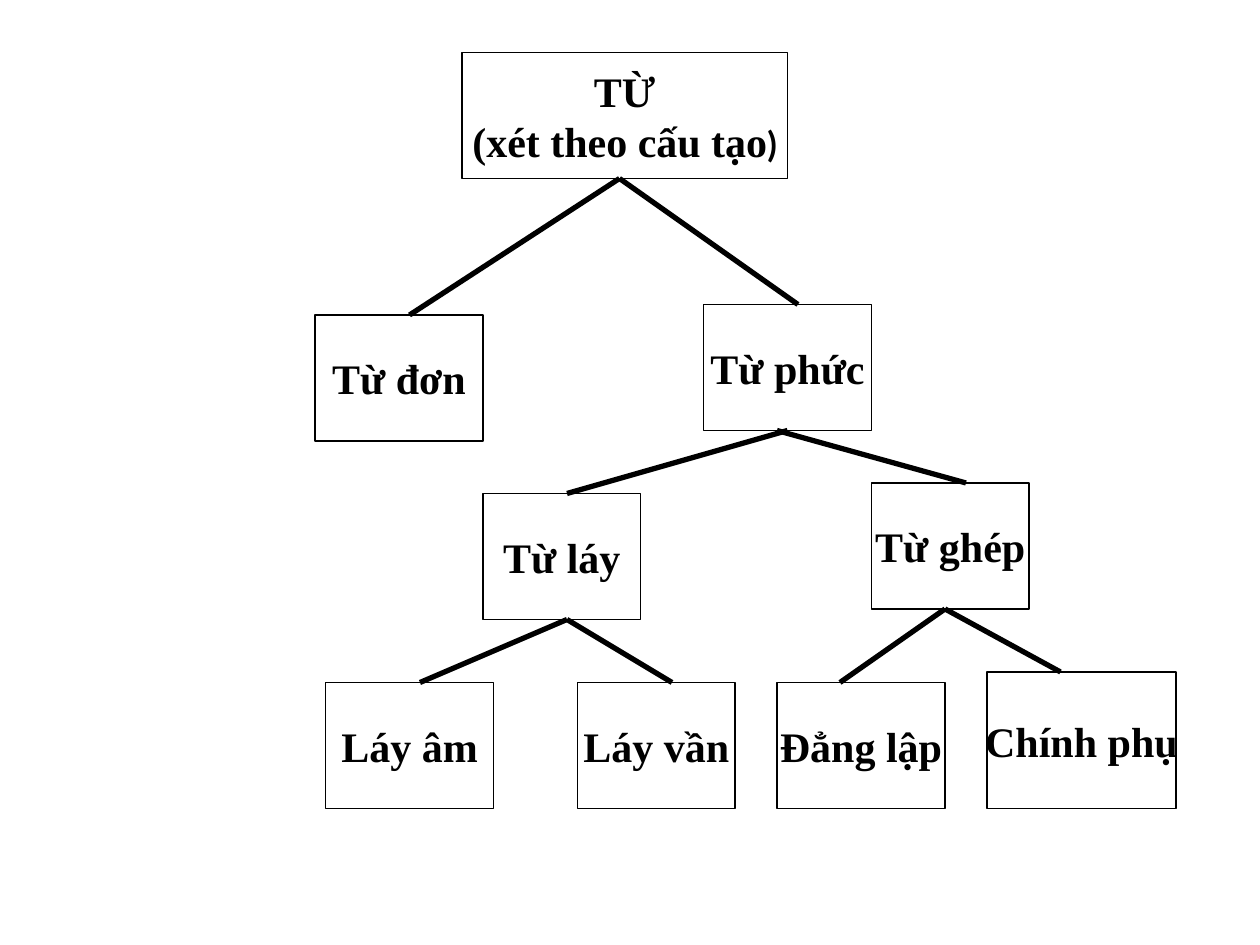
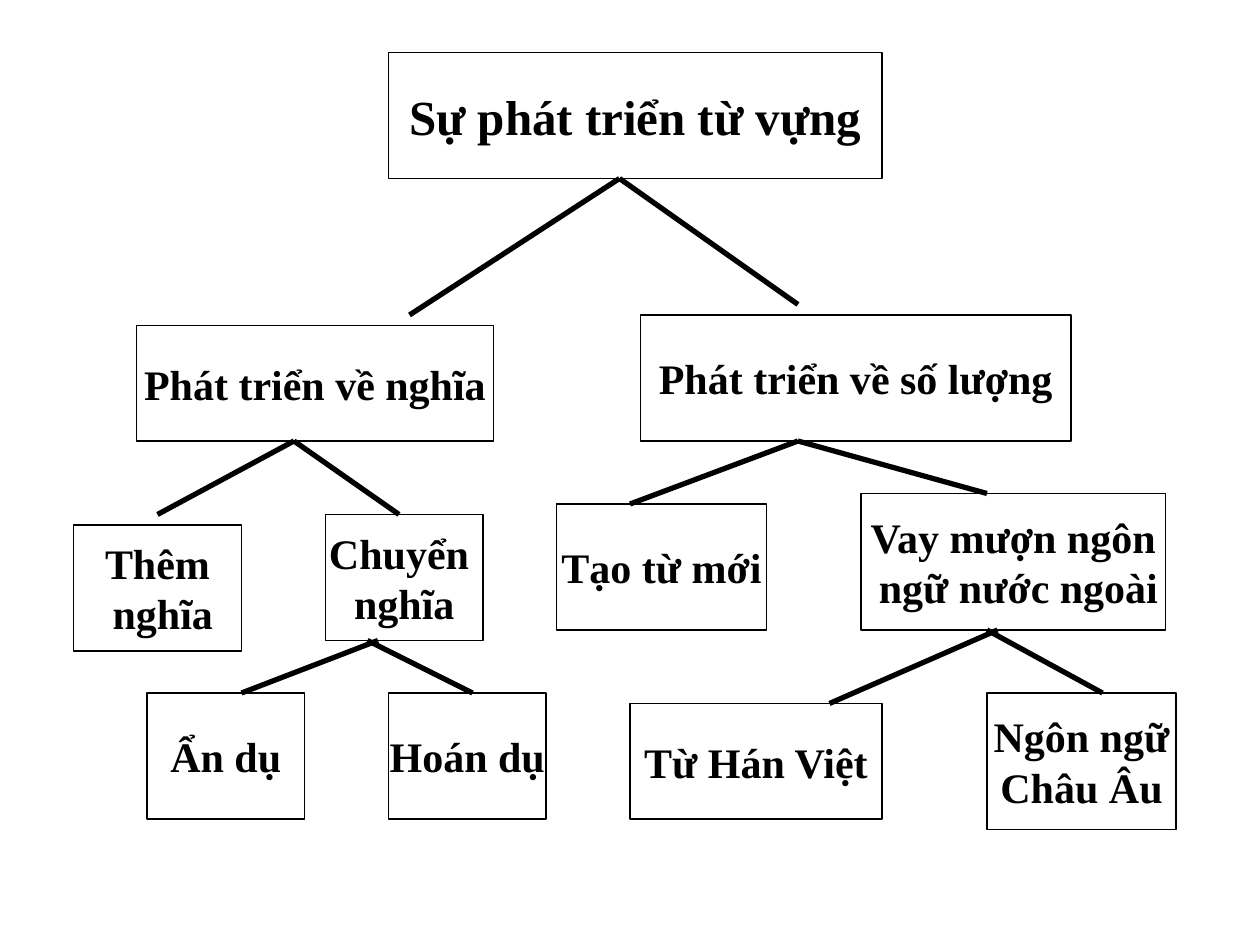
from dataclasses import dataclass
from typing import NamedTuple

from pptx import Presentation
from pptx import util as u
from pptx.dml.color import RGBColor
from pptx.enum import shapes, text
from pptx.oxml import ns, xmlchemy

BLACK = RGBColor(0x00, 0x00, 0x00)
WHITE = RGBColor(0xFF, 0xFF, 0xFF)
SERIF = "Times New Roman"
SANS = "Lato"

COLUMNS, ROWS = 120, 90
WIDTH, HEIGHT = u.Inches(10), u.Inches(7.5)
BLANK_LAYOUT = 6


@dataclass(frozen=True)
class Node:
    label: str
    column: int
    row: int
    columns: int = 16
    rows: int = 12
    size: int = 24
    closing: str = ""


class Point(NamedTuple):
    column: int
    row: int


class Branch(NamedTuple):
    parent: Point
    child: Point


@dataclass(frozen=True)
class Tree:
    nodes: list[Node]
    branches: list[Branch]


ROOT_BRANCHES = [
    Branch(Point(59, 17), Point(39, 30)),
    Branch(Point(59, 17), Point(76, 29)),
]

WORD_STRUCTURE = Tree(
    [
        Node("TỪ\n(xét theo cấu tạo", 44, 5, 31, closing=")"),
        Node("Từ đơn", 30, 30),
        Node("Từ phức", 67, 29),
        Node("Từ láy", 46, 47, 15),
        Node("Từ ghép", 83, 46, 15),
        Node("Láy âm", 31, 65),
        Node("Láy vần", 55, 65, 15),
        Node("Đẳng lập", 74, 65),
        Node("Chính phụ", 94, 64, 18, 13),
    ],
    ROOT_BRANCHES + [
        Branch(Point(75, 41), Point(54, 47)),
        Branch(Point(74, 41), Point(92, 46)),
        Branch(Point(54, 59), Point(40, 65)),
        Branch(Point(54, 59), Point(64, 65)),
        Branch(Point(90, 58), Point(80, 65)),
        Branch(Point(90, 58), Point(101, 64)),
    ],
)

VOCABULARY_GROWTH = Tree(
    [
        Node("Sự phát triển từ vựng", 37, 5, 47, size=28),
        Node("Phát triển về nghĩa", 13, 31, 34, 11),
        Node("Phát triển về số lượng", 61, 30, 41),
        Node("Tạo từ mới", 53, 48, 20),
        Node("Vay mượn ngôn\n ngữ nước ngoài", 82, 47, 29, 13),
        Node("Thêm\n nghĩa", 7, 50),
        Node("Chuyển \nnghĩa", 31, 49, 15),
        Node("Từ Hán Việt", 60, 67, 24, 11),
        Node("Ngôn ngữ\nChâu Âu", 94, 66, 18, 13),
        Node("Ẩn dụ", 14, 66, 15),
        Node("Hoán dụ", 37, 66, 15),
    ],
    ROOT_BRANCHES + [
        Branch(Point(76, 42), Point(60, 48)),
        Branch(Point(76, 42), Point(94, 47)),
        Branch(Point(95, 60), Point(79, 67)),
        Branch(Point(94, 60), Point(105, 66)),
        Branch(Point(28, 42), Point(15, 49)),
        Branch(Point(28, 42), Point(38, 49)),
        Branch(Point(36, 61), Point(23, 66)),
        Branch(Point(35, 61), Point(45, 66)),
    ],
)


def across(columns: int) -> u.Emu:
    return u.Emu(WIDTH * columns // COLUMNS)


def down(rows: int) -> u.Emu:
    return u.Emu(HEIGHT * rows // ROWS)


def draw_node(page, node: Node) -> None:
    box = page.shapes.add_shape(
        shapes.MSO_SHAPE.RECTANGLE,
        across(node.column), down(node.row), across(node.columns), down(node.rows),
    )
    box.shadow.inherit = False
    box.fill.solid()
    box.fill.fore_color.rgb = WHITE
    box.line.color.rgb = BLACK
    box.line.width = u.Pt(0.75)
    frame = box.text_frame
    frame.word_wrap = False
    frame.vertical_anchor = text.MSO_ANCHOR.MIDDLE
    frame.text = node.label
    for para in frame.paragraphs:
        para.alignment = text.PP_ALIGN.CENTER
        para.font.name = SERIF
        para.font.size = u.Pt(node.size)
        para.font.bold = True
        para.font.color.rgb = BLACK
    if node.closing:
        span = frame.paragraphs[-1].add_run()
        span.text = node.closing
        span.font.name = SANS
        span.font.size = u.Pt(20)


def draw_branch(page, branch: Branch) -> None:
    parent, child = branch
    line = page.shapes.add_connector(
        shapes.MSO_CONNECTOR.STRAIGHT,
        across(parent.column), down(parent.row), across(child.column), down(child.row),
    )
    line.line.color.rgb = BLACK
    line.line.width = u.Pt(3)
    line._element.spPr.append(xmlchemy.OxmlElement("a:effectLst"))


def draw_tree(deck, tree: Tree) -> None:
    page = deck.slides.add_slide(deck.slide_layouts[BLANK_LAYOUT])
    for node in tree.nodes:
        draw_node(page, node)
    for branch in tree.branches:
        draw_branch(page, branch)


def main() -> None:
    deck = Presentation()
    deck.slide_width, deck.slide_height = WIDTH, HEIGHT
    for tree in (WORD_STRUCTURE, VOCABULARY_GROWTH):
        draw_tree(deck, tree)
    deck.save("out.pptx")


if __name__ == "__main__":
    main()
